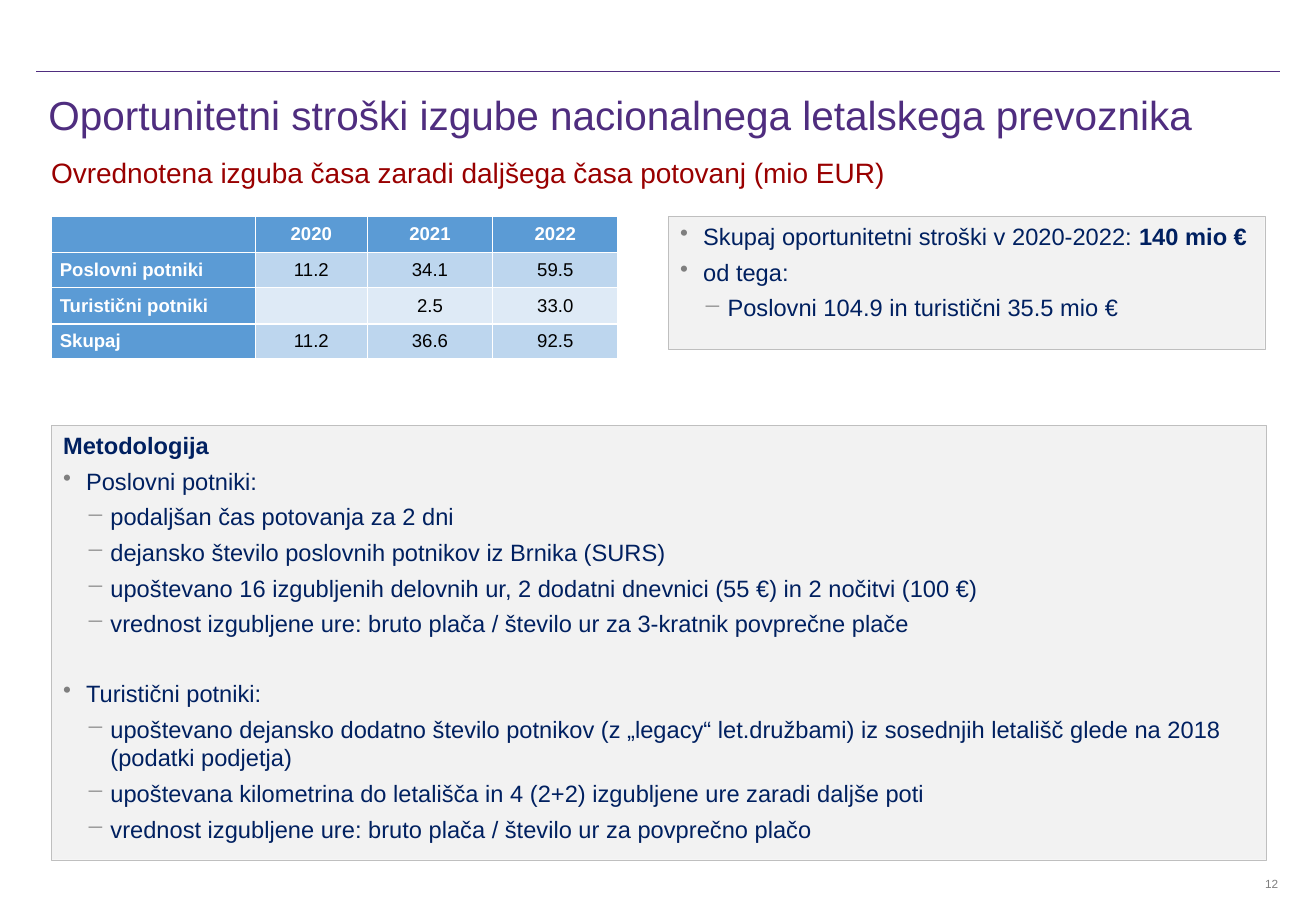
from lxml import etree
from pptx import Presentation
from pptx.dml.color import RGBColor
from pptx.enum.shapes import MSO_CONNECTOR, MSO_SHAPE
from pptx.enum.text import MSO_ANCHOR, PP_ALIGN
from pptx.oxml.ns import qn
from pptx.util import Cm, Pt

RECTANGLE = MSO_SHAPE.RECTANGLE
STRAIGHT = MSO_CONNECTOR.STRAIGHT
TOP, MIDDLE = MSO_ANCHOR.TOP, MSO_ANCHOR.MIDDLE
LEFT, CENTER, RIGHT = PP_ALIGN.LEFT, PP_ALIGN.CENTER, PP_ALIGN.RIGHT

COLOURS = {
    "purple": "4F2D7F", "red": "990000", "navy": "002060", "grey": "7F7F7F",
    "panel": "F2F2F2", "outline": "BFBFBF", "header": "5B9BD5",
    "band_dark": "BDD6EE", "band_light": "DEEAF6", "white": "FFFFFF", "black": "000000",
}
FONT = "Arial"
LINE_GAP = 4.3
SECTION_GAP = 24.7
BULLETS = {1: ("•", 0.48, -0.48), 2: ("−", 0.99, -0.51)}

COSTS = [
    ["", "2020", "2021", "2022"],
    ["Poslovni potniki", "11.2", "34.1", "59.5"],
    ["Turistični potniki", "", "2.5", "33.0"],
    ["Skupaj", "11.2", "36.6", "92.5"],
]
COLUMN_WIDTHS = [4.27, 2.34, 2.62, 2.62]

SUMMARY = [
    (1, [("Skupaj oportunitetni stroški v 2020-2022: ", False), ("140 mio €", True)], LINE_GAP),
    (1, [("od tega:", False)], LINE_GAP),
    (2, [("Poslovni 104.9 in turistični 35.5 mio €", False)], LINE_GAP),
]
METHODOLOGY = [
    (0, [("Metodologija", True)], LINE_GAP),
    (1, [("Poslovni potniki:", False)], LINE_GAP),
    (2, [("podaljšan čas potovanja za 2 dni", False)], LINE_GAP),
    (2, [("dejansko število poslovnih potnikov iz Brnika (SURS)", False)], LINE_GAP),
    (2, [("upoštevano 16 izgubljenih delovnih ur, 2 dodatni dnevnici (55 €) "
          "in 2 nočitvi (100 €)", False)], LINE_GAP),
    (2, [("vrednost izgubljene ure: bruto plača / število ur za 3-kratnik "
          "povprečne plače", False)], LINE_GAP),
    (1, [("Turistični potniki:", False)], SECTION_GAP),
    (2, [("upoštevano dejansko dodatno število potnikov (z „legacy“ let.družbami) "
          "iz sosednjih letališč glede na 2018 (podatki podjetja)", False)], LINE_GAP),
    (2, [("upoštevana kilometrina do letališča in 4 (2+2) izgubljene ure "
          "zaradi daljše poti", False)], LINE_GAP),
    (2, [("vrednost izgubljene ure: bruto plača / število ur za povprečno plačo", False)], LINE_GAP),
]


def rgb(name):
    return RGBColor.from_string(COLOURS[name])


def write(paragraph, text, size=14, colour="navy", bold=False, align=LEFT):
    paragraph.alignment = align
    run = paragraph.add_run()
    run.text = text
    run.font.name = FONT
    run.font.size = Pt(size)
    run.font.bold = bold
    run.font.color.rgb = rgb(colour)


def add_bullet(paragraph, level):
    symbol, margin, indent = BULLETS[level]
    properties = paragraph._p.get_or_add_pPr()
    properties.set("marL", str(Cm(margin)))
    properties.set("indent", str(Cm(indent)))
    bullet_colour = etree.SubElement(properties, qn("a:buClr"))
    etree.SubElement(bullet_colour, qn("a:srgbClr"), val=COLOURS["grey"])
    etree.SubElement(properties, qn("a:buChar"), char=symbol)


def add_label(slide, box, text, anchor=TOP, inset=(0, 0), wrap=True, spacing=1.0, **style):
    frame = slide.shapes.add_textbox(*map(Cm, box)).text_frame
    frame.word_wrap = wrap
    frame.vertical_anchor = anchor
    frame.margin_left = frame.margin_right = Cm(inset[0])
    frame.margin_top = frame.margin_bottom = Cm(inset[1])
    frame.paragraphs[0].line_spacing = spacing
    write(frame.paragraphs[0], text, **style)


def add_header(slide, box):
    left, top, width, _ = box
    rule = slide.shapes.add_connector(
        STRAIGHT, Cm(left), Cm(top), Cm(left + width), Cm(top))
    rule.line.color.rgb = rgb("purple")
    rule.line.width = Pt(0.25)
    etree.SubElement(rule._element.spPr, qn("a:effectLst"))
    add_label(slide, (left, top + 0.25, width, 1.45),
              "Oportunitetni stroški izgube nacionalnega letalskega prevoznika",
              anchor=MIDDLE, inset=(0.25, 0.13), spacing=0.9, size=24, colour="purple")
    add_label(slide, (left + 0.31, top + 1.77, 19.68, 0.71),
              "Ovrednotena izguba časa zaradi daljšega časa potovanj (mio EUR)",
              size=16.6, colour="red")


def add_panel(slide, box, items):
    panel = slide.shapes.add_shape(RECTANGLE, *map(Cm, box))
    panel.shadow.inherit = False
    panel.fill.solid()
    panel.fill.fore_color.rgb = rgb("panel")
    panel.line.color.rgb = rgb("outline")
    panel.line.width = Pt(0.25)
    frame = panel.text_frame
    frame.word_wrap = True
    frame.vertical_anchor = TOP
    for index, (level, parts, gap) in enumerate(items):
        paragraph = frame.add_paragraph() if index else frame.paragraphs[0]
        paragraph.space_before = Pt(gap if index else 0)
        if level:
            add_bullet(paragraph, level)
        for text, bold in parts:
            write(paragraph, text, bold=bold)


def add_borders(cell, sides):
    properties = cell._tc.get_or_add_tcPr()
    for position, side in enumerate(sides):
        border = etree.Element(qn(f"a:ln{side}"), w=str(Pt(1)))
        fill = etree.SubElement(border, qn("a:solidFill"))
        etree.SubElement(fill, qn("a:srgbClr"), val=COLOURS["white"])
        properties.insert(position, border)


def add_cost_table(slide, box):
    table = slide.shapes.add_table(len(COSTS), len(COLUMN_WIDTHS), *map(Cm, box)).table
    for column, width in zip(table.columns, COLUMN_WIDTHS):
        column.width = Cm(width)
    last = len(COLUMN_WIDTHS) - 1
    for r, values in enumerate(COSTS):
        table.rows[r].height = Cm(box[3] / len(COSTS))
        for c, value in enumerate(values):
            cell = table.cell(r, c)
            heading = r == 0 or c == 0
            band = "band_dark" if r % 2 else "band_light"
            cell.fill.solid()
            cell.fill.fore_color.rgb = rgb("header" if heading else band)
            cell.margin_left = cell.margin_right = Cm(0.18)
            cell.margin_top = cell.margin_bottom = 0
            cell.vertical_anchor = MIDDLE
            write(cell.text_frame.paragraphs[0], value, size=11, bold=heading,
                  colour="white" if heading else "black", align=CENTER if c else LEFT)
            left_side = "L" if r or c == 0 else ""
            right_side = "R" if r or c == last else ""
            add_borders(cell, left_side + right_side + "TB")


def main():
    presentation = Presentation()
    presentation.slide_width, presentation.slide_height = Cm(27.51), Cm(19.05)
    slide = presentation.slides.add_slide(presentation.slide_layouts[6])
    add_header(slide, (0.76, 1.48, 25.99, 2.48))
    add_cost_table(slide, (1.07, 4.52, sum(COLUMN_WIDTHS), 2.9))
    add_panel(slide, (13.97, 4.52, 12.47, 2.79), SUMMARY)
    add_panel(slide, (1.07, 8.89, 25.4, 9.09), METHODOLOGY)
    add_label(slide, (26.42, 18.34, 0.3, 0.3), "12",
              wrap=False, size=7, colour="grey", align=RIGHT)
    presentation.save("out.pptx")


if __name__ == "__main__":
    main()
